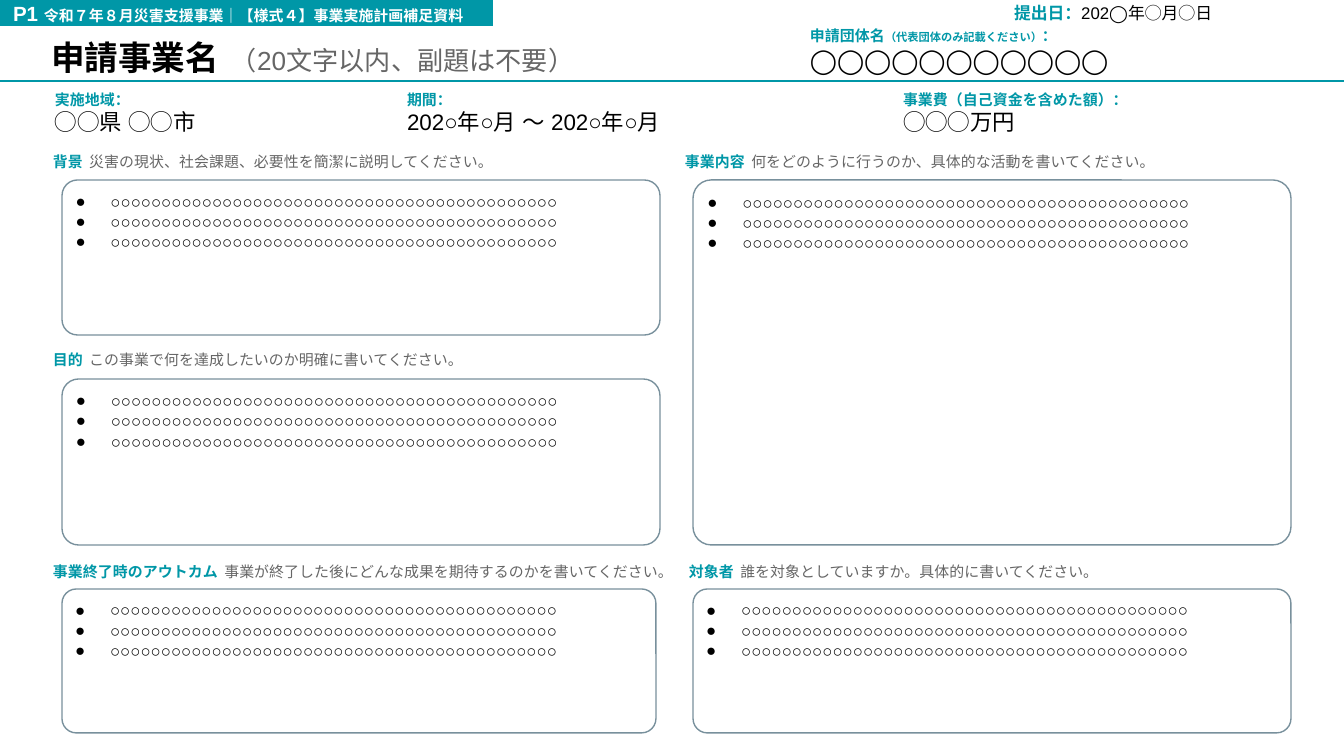
import pptx
import pptx.dml.color
import pptx.enum.shapes
import pptx.enum.text
import pptx.oxml
import pptx.oxml.ns
import pptx.util
from lxml import etree

SLIDE_W, SLIDE_H = 1344, 756
EMU_PER_PX = 9144000 / SLIDE_W
FONT = "Arial"
TEAL, GREY, SLATE = "0097A7", "666666", "78909C"
BLACK, WHITE = "000000", "FFFFFF"
GAP = " "  # en space between a heading and its hint
BULLET_LINES = 3
BULLET_TEXT = "○" * 44


def px(length):
    return pptx.util.Emu(round(length * EMU_PER_PX))


def color(hex_string):
    return pptx.dml.color.RGBColor.from_string(hex_string)


def add_xml(parent, tag, **attributes):
    return etree.SubElement(parent, pptx.oxml.ns.qn(tag), attributes)


def format_run(run, size, hex_color, bold=False):
    run.font.size = pptx.util.Pt(size)
    run.font.name = FONT
    run.font.bold = bold
    run.font.color.rgb = color(hex_color)
    # East Asian letters take the same font
    add_xml(run._r.get_or_add_rPr(), "a:ea", typeface=FONT)


def fill_frame(frame, paragraphs, insets=(13, 7), anchor="MIDDLE"):
    """Each paragraph is a list of (text, size, colour, bold) runs."""
    frame.word_wrap = True
    frame.auto_size = pptx.enum.text.MSO_AUTO_SIZE.NONE
    frame.vertical_anchor = getattr(pptx.enum.text.MSO_ANCHOR, anchor)
    frame.margin_left = frame.margin_right = px(insets[0])
    frame.margin_top = frame.margin_bottom = px(insets[1])
    for index, runs in enumerate(paragraphs):
        paragraph = frame.paragraphs[0] if index == 0 else frame.add_paragraph()
        paragraph.alignment = pptx.enum.text.PP_ALIGN.LEFT
        for text, *style in runs:
            run = paragraph.add_run()
            run.text = text
            format_run(run, *style)


def add_label(slide, box, paragraphs):
    label = slide.shapes.add_textbox(*map(px, box))
    fill_frame(label.text_frame, paragraphs)


def add_field(slide, box, caption, value, value_size=12):
    add_label(slide, box, [caption, [(value, value_size, BLACK)]])


def add_heading(slide, box, heading, hint):
    add_label(slide, box, [[
        (heading, 8, TEAL, True), (GAP, 12, TEAL, True), (hint, 8, GREY),
    ]])


def add_answer_box(slide, box, corner):
    answer = slide.shapes.add_shape(
        pptx.enum.shapes.MSO_SHAPE.ROUNDED_RECTANGLE, *map(px, box))
    answer.adjustments[0] = corner
    answer.shadow.inherit = False
    answer.fill.background()
    answer.line.color.rgb = color(SLATE)
    answer.line.width = pptx.util.Pt(0.75)
    fill_frame(answer.text_frame, [[(BULLET_TEXT, 9, BLACK)]] * BULLET_LINES,
               insets=(8, 7), anchor="TOP")
    for paragraph in answer.text_frame.paragraphs:
        properties = paragraph._p.get_or_add_pPr()
        properties.set("marL", str(px(36)))
        properties.set("indent", str(px(-35)))
        bullet_color = add_xml(properties, "a:buClr")
        add_xml(bullet_color, "a:srgbClr", val=BLACK)
        add_xml(properties, "a:buFont", typeface=FONT)
        add_xml(properties, "a:buChar", char="●")


def add_rule(slide, y):
    rule = slide.shapes.add_connector(
        pptx.enum.shapes.MSO_CONNECTOR.STRAIGHT, 0, px(y), px(SLIDE_W), px(y))
    rule.line.color.rgb = color(TEAL)
    rule.line.width = pptx.util.Pt(0.75)
    add_xml(rule._element.spPr, "a:effectLst")


def add_banner(slide):
    banner = slide.shapes.add_shape(
        pptx.enum.shapes.MSO_SHAPE.RECTANGLE, 0, 0, px(493), px(26))
    banner.shadow.inherit = False
    banner.fill.solid()
    banner.fill.fore_color.rgb = color(TEAL)
    banner.line.fill.background()
    fill_frame(banner.text_frame, [[
        ("P1" + GAP, 11, WHITE, True),
        ("令和７年８月災害支援事業｜【様式４】事業実施計画補足資料", 8, WHITE, True),
    ]], insets=(13, 13))


def set_title(slide):
    title = slide.shapes.title
    title.left, title.top, title.width, title.height = map(px, (38, 31, 759, 44))
    fill_frame(title.text_frame, [[
        ("申請事業名", 18, BLACK, True),
        (" ", 23, BLACK, True),
        ("（20文字以内、副題は不要）", 14, GREY),
    ]])


def main():
    presentation = pptx.Presentation()
    presentation.slide_width, presentation.slide_height = px(SLIDE_W), px(SLIDE_H)
    slide = presentation.slides.add_slide(presentation.slide_layouts[5])

    # Header
    add_rule(slide, 81)
    add_banner(slide)
    set_title(slide)
    add_field(slide, (797, 23, 493, 55), [
        ("申請団体名", 8, TEAL, True),
        ("（代表団体のみ記載ください）", 6, TEAL, True),
        ("：", 8, TEAL, True),
    ], "◯" * 11, 13)
    add_label(slide, (1001, 0, 290, 26), [[
        ("提出日：", 9, TEAL, True), ("202◯年◯月◯日", 9, BLACK),
    ]])

    # Project facts
    for left, width, caption, value in (
        (42, 332, "実施地域：", "◯◯県 ◯◯市"),
        (394, 464, "期間：", "202○年○月 〜 202○年○月"),
        (890, 402, "事業費（自己資金を含めた額）：", "◯◯◯万円"),
    ):
        add_field(slide, (left, 85, width, 55), [(caption, 8, TEAL, True)], value)

    # Sections: heading box, answer box, corner, heading, hint
    for heading_box, answer_box, corner, heading, hint in (
        ((40, 142, 536, 34), (62, 180, 598, 155), 0.1,
         "背景", "災害の現状、社会課題、必要性を簡潔に説明してください。"),
        ((40, 340, 536, 34), (62, 379, 598, 166), 0.1,
         "目的", "この事業で何を達成したいのか明確に書いてください。"),
        ((40, 552, 668, 34), (62, 589, 594, 144), 0.1,
         "事業終了時のアウトカム",
         "事業が終了した後にどんな成果を期待するのかを書いてください。"),
        ((672, 142, 536, 34), (693, 180, 598, 365), 0.05,
         "事業内容", "何をどのように行うのか、具体的な活動を書いてください。"),
        ((676, 552, 616, 34), (693, 589, 598, 144), 0.1,
         "対象者", "誰を対象としていますか。具体的に書いてください。"),
    ):
        add_answer_box(slide, answer_box, corner)
        add_heading(slide, heading_box, heading, hint)

    presentation.save("out.pptx")


if __name__ == "__main__":
    main()
